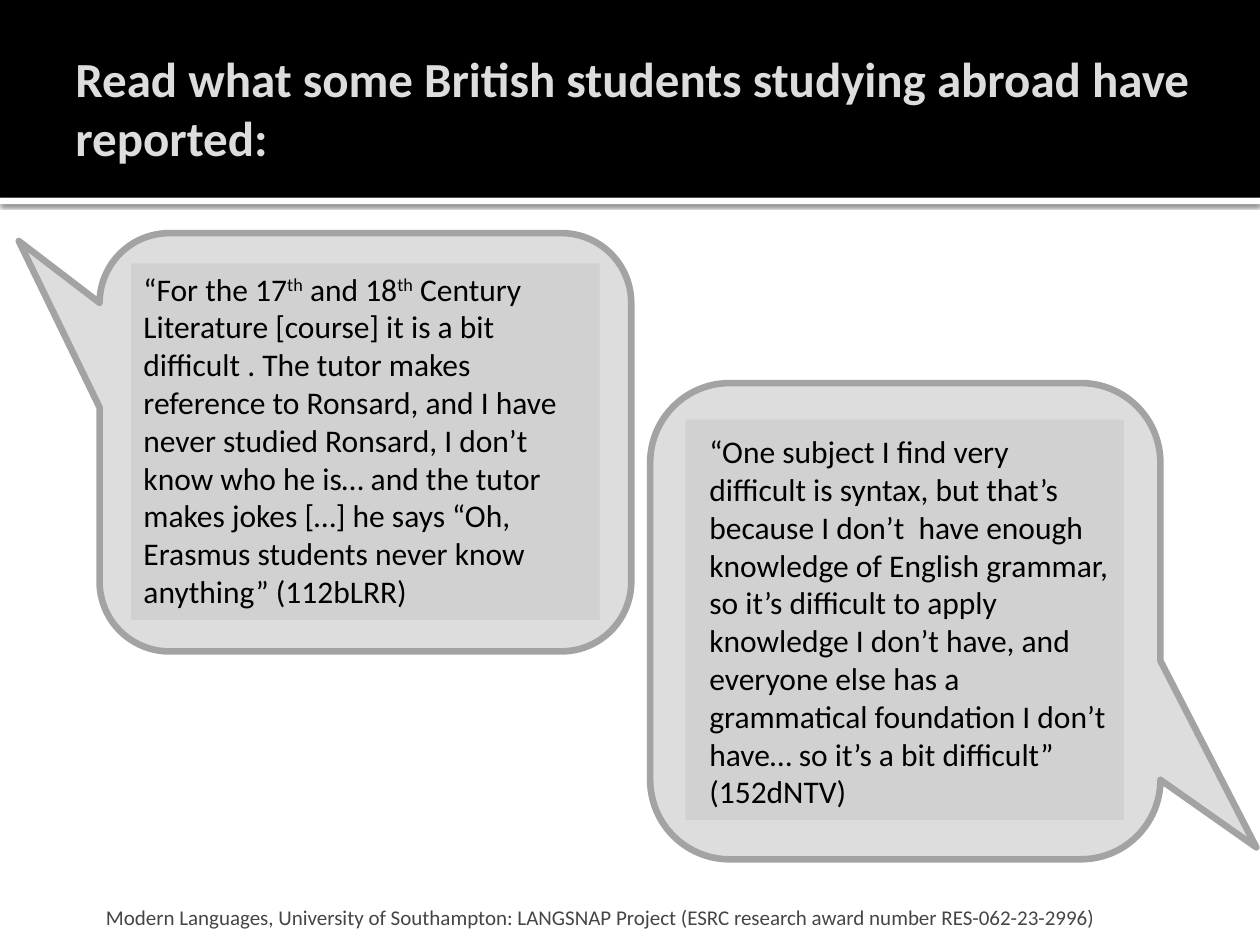
from dataclasses import dataclass

from lxml import etree
from pptx import Presentation
from pptx import util as u
from pptx.dml.color import RGBColor
from pptx.enum import shapes, text
from pptx.oxml import ns

FONT = "Calibri"
BLACK, WHITE, PALE = "000000", "FFFFFF", "DDDDDD"
PANEL, OUTLINE, FOOTER = "D1D1D1", "A3A3A3", "454545"
SUPERSCRIPTS = ("th",)


@dataclass
class Box:
    left: float
    top: float
    width: float
    height: float

    def lengths(self) -> list:
        return [u.Inches(n) for n in (self.left, self.top, self.width, self.height)]


@dataclass
class Quote:
    bubble: Box
    tail: tuple[float, float]
    panel: Box
    wording: list[str]
    insets: tuple[float, ...] = (0.1, 0.05, 0.1, 0.05)
    indent: float = 0


QUOTES = [
    Quote(
        Box(5.16, 3.04, 4.05, 3.78), (0.688, 0.475), Box(5.44, 3.33, 3.48, 3.18),
        ["“One subject I find very difficult is syntax, but that’s because I don’t  have "
         "enough knowledge of English grammar, so it’s difficult to apply knowledge I don’t "
         "have, and everyone else has a grammatical foundation I don’t have… so it’s a bit "
         "difficult” (152dNTV)"],
        insets=(0.06, 0.1, 0.1, 0.05), indent=0.13,
    ),
    Quote(
        Box(0.79, 1.85, 4.22, 3.32), (-0.652, -0.481), Box(1.04, 2.09, 3.72, 2.83),
        ["“For the 17", "th", " and 18", "th",
         " Century Literature [course] it is a bit difficult . The tutor makes reference to "
         "Ronsard, and I have never studied Ronsard, I don’t know who he is… and the tutor "
         "makes jokes […] he says “Oh, Erasmus students never know anything” (112bLRR)"],
    ),
]


def colour(value: str) -> RGBColor:
    return RGBColor.from_string(value)


def add_filled(page, kind, box: Box, fill: str):
    shape = page.shapes.add_shape(kind, *box.lengths())
    shape.shadow.inherit = False
    shape.fill.solid()
    shape.fill.fore_color.rgb = colour(fill)
    shape.line.fill.background()
    return shape


def add_shadow(shape) -> None:
    """Soft shadow falling straight down."""
    effects = shape._element.spPr.find(ns.qn("a:effectLst"))
    outer = etree.SubElement(effects, ns.qn("a:outerShdw"), blurRad=str(u.Pt(2.5)),
                             dist=str(u.Pt(0.8)), dir="5400000", rotWithShape="0")
    tint = etree.SubElement(outer, ns.qn("a:srgbClr"), val=BLACK)
    etree.SubElement(tint, ns.qn("a:alpha"), val="60000")


def write(shape, wording: list[str], size: float, ink: str, insets: tuple[float, ...],
          anchor, bold: bool = False, indent: float = 0) -> None:
    frame = shape.text_frame
    frame.word_wrap = True
    frame.vertical_anchor = anchor
    (frame.margin_left, frame.margin_top,
     frame.margin_right, frame.margin_bottom) = map(u.Inches, insets)
    para = frame.paragraphs[0]
    para.alignment = text.PP_ALIGN.LEFT
    if indent:
        para._p.get_or_add_pPr().set("marL", str(u.Inches(indent)))
    for words in wording:
        span = para.add_run()
        span.text = words
        span.font.name = FONT
        span.font.size = u.Pt(size)
        span.font.bold = bold
        span.font.color.rgb = colour(ink)
        if words in SUPERSCRIPTS:
            span._r.get_or_add_rPr().set("baseline", "30000")


def add_bubble(page, quote: Quote) -> None:
    bubble = add_filled(page, shapes.MSO_SHAPE.ROUNDED_RECTANGULAR_CALLOUT,
                        quote.bubble, PALE)
    bubble.line.color.rgb = colour(OUTLINE)
    bubble.line.width = u.Pt(3.78)
    for index, value in enumerate((*quote.tail, 0.167)):
        bubble.adjustments[index] = value


def add_panel(page, quote: Quote) -> None:
    panel = add_filled(page, shapes.MSO_SHAPE.RECTANGLE, quote.panel, PANEL)
    write(panel, quote.wording, 18, BLACK, quote.insets, text.MSO_ANCHOR.TOP,
          indent=quote.indent)
    panel.text_frame.auto_size = text.MSO_AUTO_SIZE.SHAPE_TO_FIT_TEXT


def main() -> None:
    deck = Presentation()
    deck.slide_width, deck.slide_height = u.Inches(10), u.Inches(7.5)
    page = deck.slides.add_slide(deck.slide_layouts[6])

    # Header band with a shadowed white rule below it
    rule = add_filled(page, shapes.MSO_SHAPE.RECTANGLE, Box(0, 1.57, 10, 0.05), WHITE)
    add_shadow(rule)
    add_filled(page, shapes.MSO_SHAPE.RECTANGLE, Box(0, 0, 10, 1.57), BLACK)

    # Speech bubbles
    for quote in QUOTES:
        add_bubble(page, quote)

    # Title and footer
    title = page.shapes.add_textbox(*Box(0.5, 0.17, 9, 1.37).lengths())
    write(title, ["Read what some British students studying abroad have reported:"],
          28, PALE, (0.1, 0.05, 0.05, 0.05), text.MSO_ANCHOR.MIDDLE, bold=True)
    footer = page.shapes.add_textbox(*Box(0.79, 7.06, 8.41, 0.32).lengths())
    write(footer, ["Modern Languages, University of Southampton: LANGSNAP Project "
                   "(ESRC research award number RES-062-23-2996)"],
          12, FOOTER, (0.05, 0.05, 0.05, 0), text.MSO_ANCHOR.BOTTOM)

    # Quotations, on top of the bubbles
    for quote in reversed(QUOTES):
        add_panel(page, quote)

    deck.save("out.pptx")


if __name__ == "__main__":
    main()
